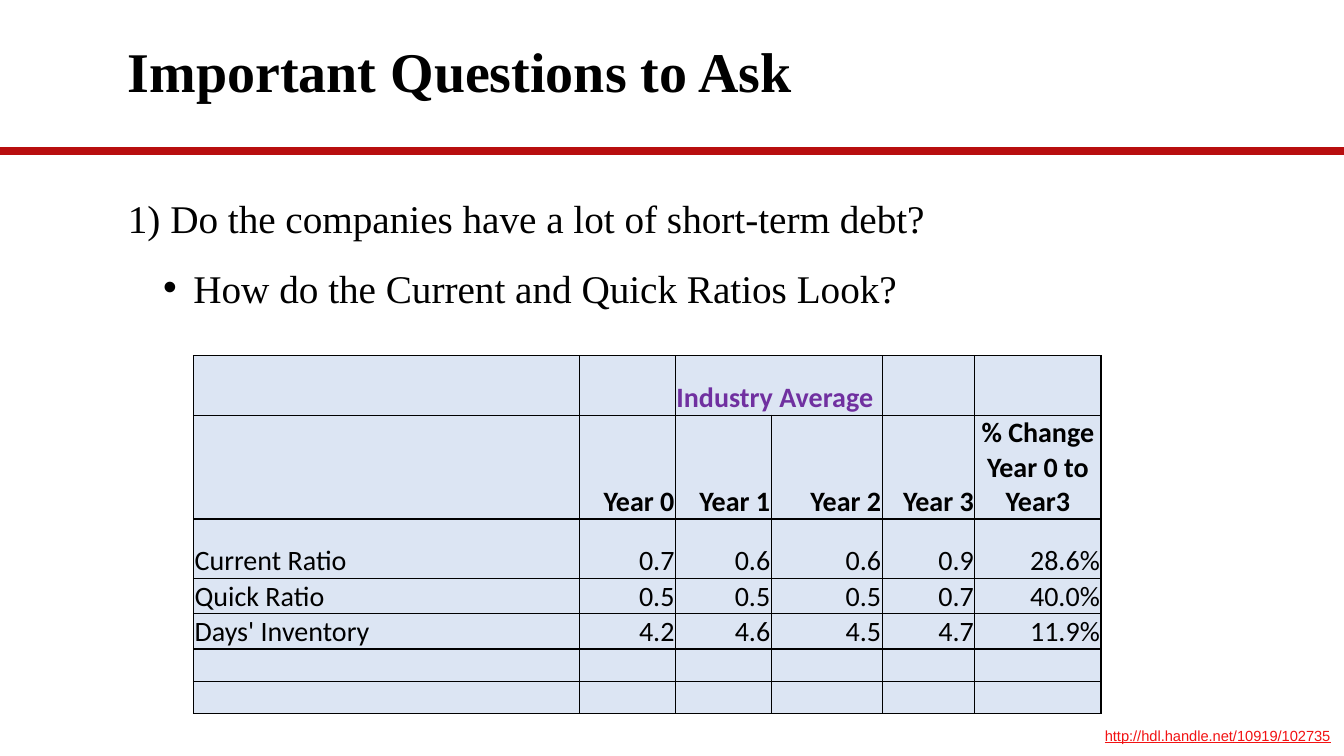
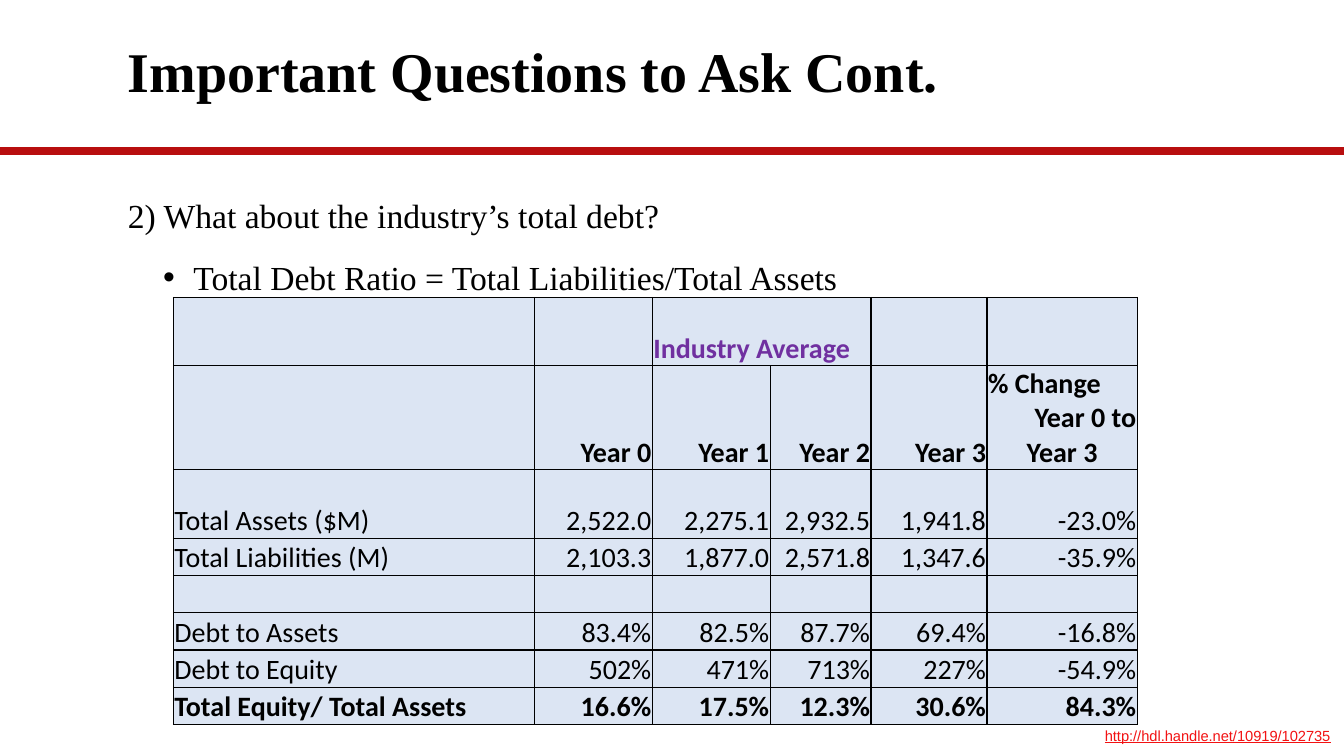
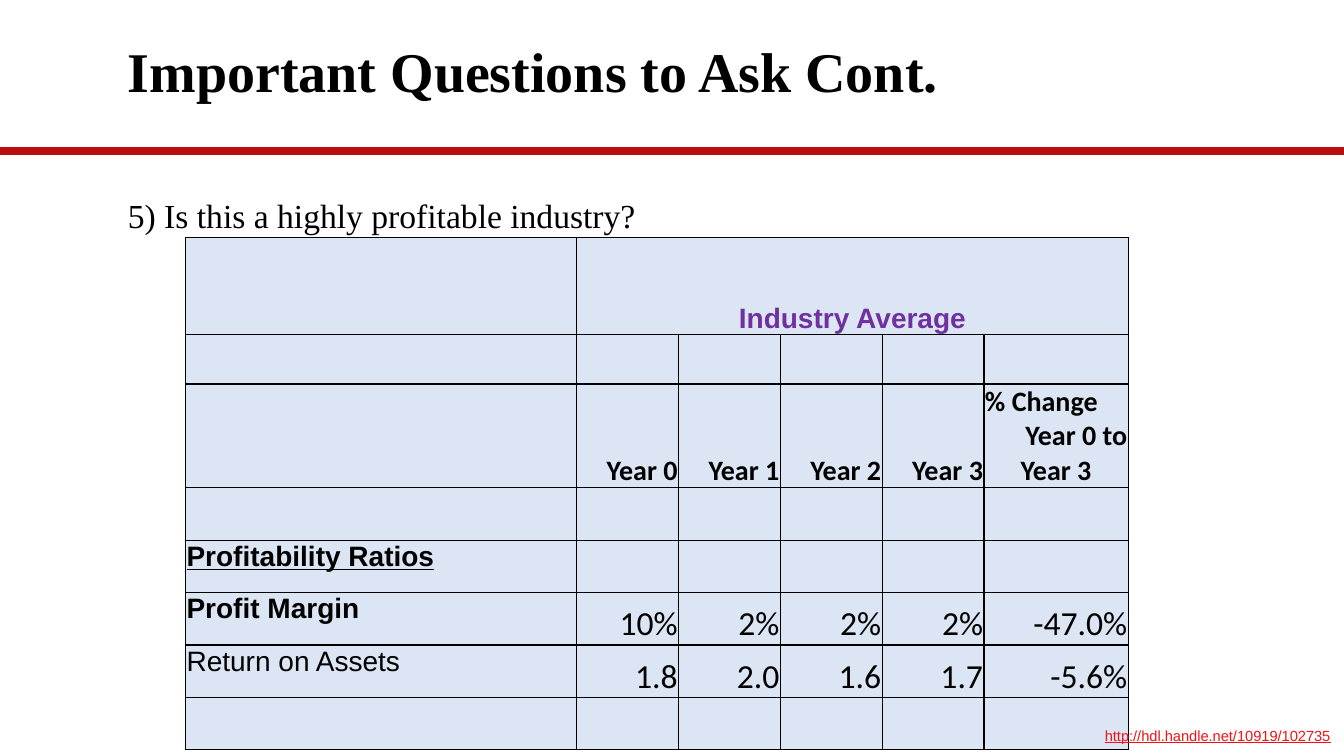
import dataclasses

import lxml.etree
import pptx
import pptx.dml.color
import pptx.enum.shapes
import pptx.enum.text
import pptx.oxml.ns
import pptx.util

Inches = pptx.util.Inches
Pt = pptx.util.Pt
RGBColor = pptx.dml.color.RGBColor
ALIGN = pptx.enum.text.PP_ALIGN
ANCHOR = pptx.enum.text.MSO_ANCHOR
qn = pptx.oxml.ns.qn

BLACK = RGBColor(0x00, 0x00, 0x00)
RULE_RED = RGBColor(0xB8, 0x0E, 0x0F)
LINK_RED = RGBColor(0xF2, 0x12, 0x13)
PURPLE = RGBColor(0x70, 0x30, 0xA0)
CELL_BLUE = RGBColor(0xDC, 0xE5, 0xF3)

SERIF, SANS, TABLE_FONT = "Times New Roman", "Arial", "Calibri"


@dataclasses.dataclass(frozen=True)
class Box:
    """A region of the slide, in inches."""
    left: float
    top: float
    width: float
    height: float

    def emu(self):
        return [Inches(side) for side in dataclasses.astuple(self)]


@dataclasses.dataclass(frozen=True)
class Style:
    font: str = TABLE_FONT
    size: float = 20
    bold: bool = False
    underline: bool = False
    color: RGBColor = BLACK
    align: ALIGN = ALIGN.LEFT
    anchor: ANCHOR = ANCHOR.BOTTOM


@dataclasses.dataclass(frozen=True)
class Row:
    """One table row: relative height, texts from the first column on, styles."""
    height: float
    texts: tuple = ()
    label_style: Style = Style()
    value_style: Style = Style(align=ALIGN.RIGHT)


SLIDE = Box(0, 0, 13.33, 7.5)
TITLE = Box(1.17, 0.14, 11, 1.2)
QUESTION = Box(1.17, 1.88, 11, 1.66)
SOURCE = Box(10.86, 7.12, 2.47, 0.38)
RULE_TOP = 1.5

TITLE_STYLE = Style(SERIF, 40, bold=True, anchor=ANCHOR.MIDDLE)
SOURCE_STYLE = Style(SANS, 10.5, underline=True, color=LINK_RED, anchor=ANCHOR.TOP)
AVERAGE = Style(bold=True, color=PURPLE)
AVERAGE_CENTERED = dataclasses.replace(AVERAGE, font=SANS, align=ALIGN.CENTER)
YEAR = Style(bold=True, align=ALIGN.RIGHT)
RATIO = Style(SANS, anchor=ANCHOR.TOP)
RATIO_BOLD = dataclasses.replace(RATIO, bold=True)
RATIO_GROUP = dataclasses.replace(RATIO_BOLD, underline=True)
LARGE_VALUE = Style(size=24, align=ALIGN.RIGHT)

YEARS = ("", "Year 0", "Year 1", "Year 2", "Year 3")
CHANGE = (("% Change Year 0 to Year3", ALIGN.CENTER),)
CHANGE_STAGGERED = (("% Change", ALIGN.LEFT), ("Year 0 to", ALIGN.RIGHT),
                    ("Year 3", ALIGN.CENTER))


def add_text(paragraph, text, style, align=None):
    paragraph.alignment = style.align if align is None else align
    run = paragraph.add_run()
    run.text = text
    run.font.name = style.font
    run.font.size = Pt(style.size)
    run.font.bold = style.bold
    run.font.underline = style.underline
    run.font.color.rgb = style.color


def add_frame(slide, box, anchor, inset=0.05):
    frame = slide.shapes.add_textbox(*box.emu()).text_frame
    frame.word_wrap = True
    frame.vertical_anchor = anchor
    frame.margin_top = frame.margin_bottom = Inches(inset)
    return frame


def add_rule(slide):
    rule = slide.shapes.add_connector(
        pptx.enum.shapes.MSO_CONNECTOR.STRAIGHT,
        0, Inches(RULE_TOP), Inches(SLIDE.width), Inches(RULE_TOP))
    rule.line.color.rgb = RULE_RED
    rule.line.width = Pt(6)
    lxml.etree.SubElement(rule._element.spPr, qn("a:effectLst"))


def add_title(slide, title):
    heading = add_frame(slide, TITLE, TITLE_STYLE.anchor).paragraphs[0]
    heading.line_spacing = 0.9
    add_text(heading, title, TITLE_STYLE)


def add_source(slide):
    frame = add_frame(slide, SOURCE, SOURCE_STYLE.anchor, inset=0.1)
    add_text(frame.paragraphs[0], "http://hdl.handle.net/10919/102735", SOURCE_STYLE)


def add_question(slide, size, question, detail=None):
    """Place the numbered question and, if given, its bulleted detail."""
    style = Style(SERIF, size)
    frame = add_frame(slide, QUESTION, ANCHOR.TOP)
    add_text(frame.paragraphs[0], question, style)
    if detail:
        bulleted = frame.add_paragraph()
        bulleted.space_before = Pt(16)
        add_text(bulleted, detail, style)
        properties = bulleted._p.get_or_add_pPr()
        properties.set("marL", str(Inches(0.65)))
        properties.set("indent", str(Inches(-0.3)))
        bullet_font = lxml.etree.SubElement(properties, qn("a:buFont"))
        bullet_font.set("typeface", SANS)
        lxml.etree.SubElement(properties, qn("a:buChar")).set("char", "•")


def style_cell(cell):
    """Give the cell thin insets, black borders on all sides and a blue fill."""
    cell.margin_left = cell.margin_right = cell.margin_top = Inches(0.01)
    cell.margin_bottom = 0
    properties = cell._tc.get_or_add_tcPr()
    for side in ("a:lnL", "a:lnR", "a:lnT", "a:lnB"):
        border = lxml.etree.SubElement(properties, qn(side), w=str(Pt(1)))
        paint = lxml.etree.SubElement(border, qn("a:solidFill"))
        lxml.etree.SubElement(paint, qn("a:srgbClr"), val=str(BLACK))
    cell.fill.solid()
    cell.fill.fore_color.rgb = CELL_BLUE


def fill_cell(cell, content, style):
    """Write a text, or several (text, alignment) lines, into the cell."""
    cell.vertical_anchor = style.anchor
    lines = ((content, style.align),) if isinstance(content, str) else content
    for index, (text, align) in enumerate(lines):
        frame = cell.text_frame
        paragraph = frame.add_paragraph() if index else frame.paragraphs[0]
        add_text(paragraph, text, style, align)


def add_ratio_table(slide, box, columns, rows, average_span):
    """Share the box among columns and rows; average_span is merged in row 0."""
    table = slide.shapes.add_table(len(rows), len(columns), *box.emu()).table
    table.first_row = table.horz_banding = False
    for column, share in zip(table.columns, columns):
        column.width = Inches(box.width * share / sum(columns))
    total_height = sum(row.height for row in rows)
    for table_row, row in zip(table.rows, rows):
        table_row.height = Inches(box.height * row.height / total_height)
        for cell in table_row.cells:
            style_cell(cell)
        for index, (cell, content) in enumerate(zip(table_row.cells, row.texts)):
            if content:
                fill_cell(cell, content, row.value_style if index else row.label_style)
    first, last = average_span
    table.cell(0, first).merge(table.cell(0, last))


def add_question_slide(deck, title, question, table):
    slide = deck.slides.add_slide(deck.slide_layouts[6])
    add_rule(slide)
    add_title(slide, title)
    add_question(slide, *question)
    add_ratio_table(slide, *table)
    add_source(slide)


SHORT_TERM_ROWS = (
    Row(0.59, ("", "", "Industry Average"), value_style=AVERAGE),
    Row(1.03, YEARS + (CHANGE,), value_style=YEAR),
    Row(0.59, ("Current Ratio", "0.7", "0.6", "0.6", "0.9", "28.6%")),
    Row(0.35, ("Quick Ratio", "0.5", "0.5", "0.5", "0.7", "40.0%")),
    Row(0.35, ("Days' Inventory", "4.2", "4.6", "4.5", "4.7", "11.9%")),
    Row(0.32),
    Row(0.32),
)

TOTAL_DEBT_ROWS = (
    Row(0.68, ("", "", "Industry Average"), value_style=AVERAGE),
    Row(1.03, YEARS + (CHANGE_STAGGERED,), value_style=YEAR),
    Row(0.68, ("Total Assets ($M)", "2,522.0", "2,275.1", "2,932.5", "1,941.8", "-23.0%")),
    Row(0.37, ("Total Liabilities (M)", "2,103.3", "1,877.0", "2,571.8", "1,347.6", "-35.9%")),
    Row(0.37),
    Row(0.37, ("Debt to Assets", "83.4%", "82.5%", "87.7%", "69.4%", "-16.8%")),
    Row(0.37, ("Debt to Equity", "502%", "471%", "713%", "227%", "-54.9%")),
    Row(0.37, ("Total Equity/ Total Assets", "16.6%", "17.5%", "12.3%", "30.6%", "84.3%"),
        Style(bold=True), YEAR),
)

PROFITABILITY_ROWS = (
    Row(0.96, ("", "Industry Average"), value_style=AVERAGE_CENTERED),
    Row(0.49),
    Row(1.03, YEARS + (CHANGE_STAGGERED,), value_style=YEAR),
    Row(0.52),
    Row(0.52, ("Profitability Ratios",), RATIO_GROUP),
    Row(0.52, ("Profit Margin", "10%", "2%", "2%", "2%", "-47.0%"), RATIO_BOLD, LARGE_VALUE),
    Row(0.52, ("Return on Assets", "1.8", "2.0", "1.6", "1.7", "-5.6%"), RATIO, LARGE_VALUE),
    Row(0.52),
)


def main():
    deck = pptx.Presentation()
    deck.slide_width = Inches(SLIDE.width)
    deck.slide_height = Inches(SLIDE.height)
    add_question_slide(
        deck, "Important Questions to Ask",
        (28, "1) Do the companies have a lot of short-term debt?",
         "How do the Current and Quick Ratios Look?"),
        (Box(1.92, 3.53, 9, 3.55), (3.83, 0.95, 0.95, 1.1, 0.92, 1.25),
         SHORT_TERM_ROWS, (2, 3)))
    add_question_slide(
        deck, "Important Questions to Ask Cont.",
        (24, "2) What about the industry’s total debt?",
         "Total Debt Ratio = Total Liabilities/Total Assets"),
        (Box(1.72, 2.95, 9.56, 4.24), (3.58, 1.17, 1.17, 1, 1.15, 1.49),
         TOTAL_DEBT_ROWS, (2, 3)))
    add_question_slide(
        deck, "Important Questions to Ask Cont.",
        (24, "5) Is this a highly profitable industry?"),
        (Box(1.84, 2.36, 9.35, 5.08), (3.88, 1.01, 1.01, 1.01, 1.01, 1.43),
         PROFITABILITY_ROWS, (1, 5)))
    deck.save("out.pptx")


if __name__ == "__main__":
    main()
